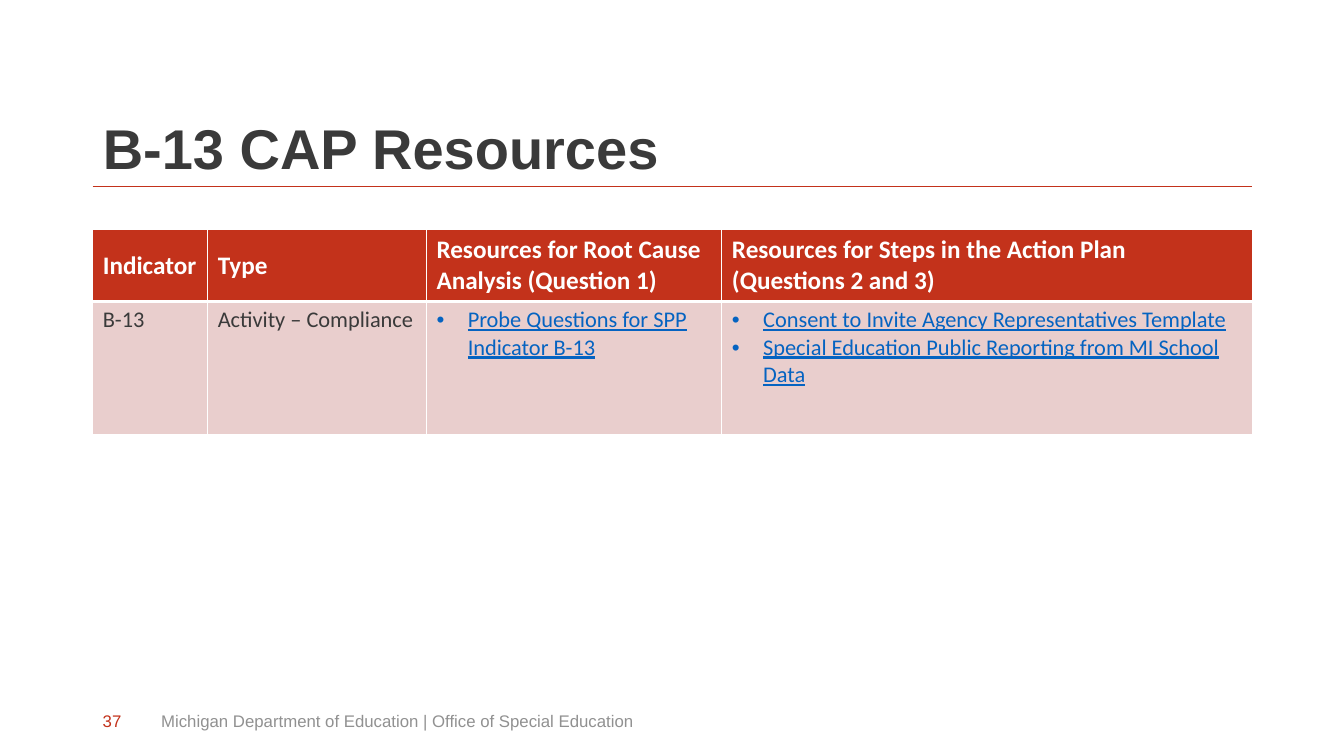
from lxml import etree
from pptx import Presentation
from pptx import util as u
from pptx.dml import color
from pptx.enum import shapes, text
from pptx.oxml import ns

RED, INK, WHITE, PINK, GREY, BLUE = "C3321B", "3A3A3A", "FFFFFF", "E9CECD", "919191", "0563C1"
LEFT, WIDTH = 0.92, 11.5
FOOTER_TOP, FOOTER_HEIGHT = 6.95, 0.4
COLUMNS = [1.14, 2.17, 2.93, 5.26]
ROWS = [0.7, 1.32]
HEADINGS = [
    "Indicator",
    "Type",
    "Resources for Root Cause Analysis (Question 1)",
    "Resources for Steps in the Action Plan (Questions 2 and 3)",
]
RESOURCES = [
    "B-13",
    "Activity – Compliance",
    "Probe Questions for SPP Indicator B-13",
    "Consent to Invite Agency Representatives Template\n"
    "Special Education Public Reporting from MI School Data",
]
FIRST_LINK_COLUMN = 2


def paint(target, value):
    target.rgb = color.RGBColor.from_string(value)


def format_runs(para, font, size, value, bold=False, underline=False):
    for span in para.runs:
        span.font.name = font
        span.font.size = u.Pt(size)
        span.font.bold = bold
        span.font.underline = underline
        paint(span.font.color, value)


def place(box, left, top, width, height):
    box.left, box.top, box.width, box.height = map(u.Inches, (left, top, width, height))


def add_title(page, wording):
    title = page.shapes.title
    place(title, LEFT, 0.4, WIDTH, 1.45)
    frame = title.text_frame
    frame.text = wording
    frame.auto_size = text.MSO_AUTO_SIZE.NONE
    frame.vertical_anchor = text.MSO_ANCHOR.BOTTOM
    para = frame.paragraphs[0]
    para.alignment = text.PP_ALIGN.LEFT
    para.line_spacing = 0.9
    format_runs(para, "Arial", 40, INK, bold=True)


def add_rule(page, top):
    rule = page.shapes.add_connector(
        shapes.MSO_CONNECTOR.STRAIGHT,
        u.Inches(LEFT), u.Inches(top), u.Inches(LEFT + WIDTH), u.Inches(top),
    )
    paint(rule.line.color, RED)
    rule.line.width = u.Pt(0.5)
    etree.SubElement(rule._element.spPr, ns.qn("a:effectLst"))


def add_footer(page, wording, left, width, value):
    box = page.shapes.add_textbox(0, 0, 0, 0)
    place(box, left, FOOTER_TOP, width, FOOTER_HEIGHT)
    frame = box.text_frame
    frame.word_wrap = True
    frame.vertical_anchor = text.MSO_ANCHOR.MIDDLE
    frame.text = wording
    format_runs(frame.paragraphs[0], "Arial", 12, value)


def add_bullet(para):
    properties = para._p.get_or_add_pPr()
    indent = u.Inches(0.31)
    properties.set("marL", str(indent))
    properties.set("indent", str(-indent))
    etree.SubElement(properties, ns.qn("a:buFont"), typeface="Arial")
    etree.SubElement(properties, ns.qn("a:buChar"), char="•")


def add_borders(cell, widths):
    properties = cell._tc.get_or_add_tcPr()
    for side, width in widths.items():
        line = etree.SubElement(properties, ns.qn(f"a:ln{side}"), w=str(u.Pt(width)))
        fill = etree.SubElement(line, ns.qn("a:solidFill"))
        etree.SubElement(fill, ns.qn("a:srgbClr"), val=WHITE)


def style_cell(cell, wording, header, linked):
    add_borders(cell, {"L": 1, "R": 1, "T": 1 if header else 3, "B": 3 if header else 1})
    cell.fill.solid()
    paint(cell.fill.fore_color, RED if header else PINK)
    cell.vertical_anchor = text.MSO_ANCHOR.MIDDLE if header else text.MSO_ANCHOR.TOP
    cell.text_frame.text = wording
    for para in cell.text_frame.paragraphs:
        if header:
            format_runs(para, "Calibri", 18, WHITE, bold=True)
        else:
            if linked:
                add_bullet(para)
            format_runs(para, "Calibri", 16, BLUE if linked else INK, underline=linked)


def add_resource_table(page):
    frame = page.shapes.add_table(len(ROWS), len(COLUMNS), 0, 0, 0, 0)
    place(frame, LEFT, 2.28, WIDTH, sum(ROWS))
    table = frame.table
    for column, width in zip(table.columns, COLUMNS):
        column.width = u.Inches(width)
    for row, height in zip(table.rows, ROWS):
        row.height = u.Inches(height)
    for row_index, wordings in enumerate([HEADINGS, RESOURCES]):
        for column_index, wording in enumerate(wordings):
            header = row_index == 0
            linked = not header and column_index >= FIRST_LINK_COLUMN
            style_cell(table.cell(row_index, column_index), wording, header, linked)


def main():
    deck = Presentation()
    deck.slide_width, deck.slide_height = u.Inches(13.33), u.Inches(7.5)
    page = deck.slides.add_slide(deck.slide_layouts.get_by_name("Title Only"))
    add_rule(page, 1.85)
    add_title(page, "B-13 CAP Resources")
    add_resource_table(page)
    add_footer(page, "Michigan Department of Education | Office of Special Education", 1.5, 8.39, GREY)
    add_footer(page, "37", LEFT, 0.45, RED)
    deck.save("out.pptx")


if __name__ == "__main__":
    main()
